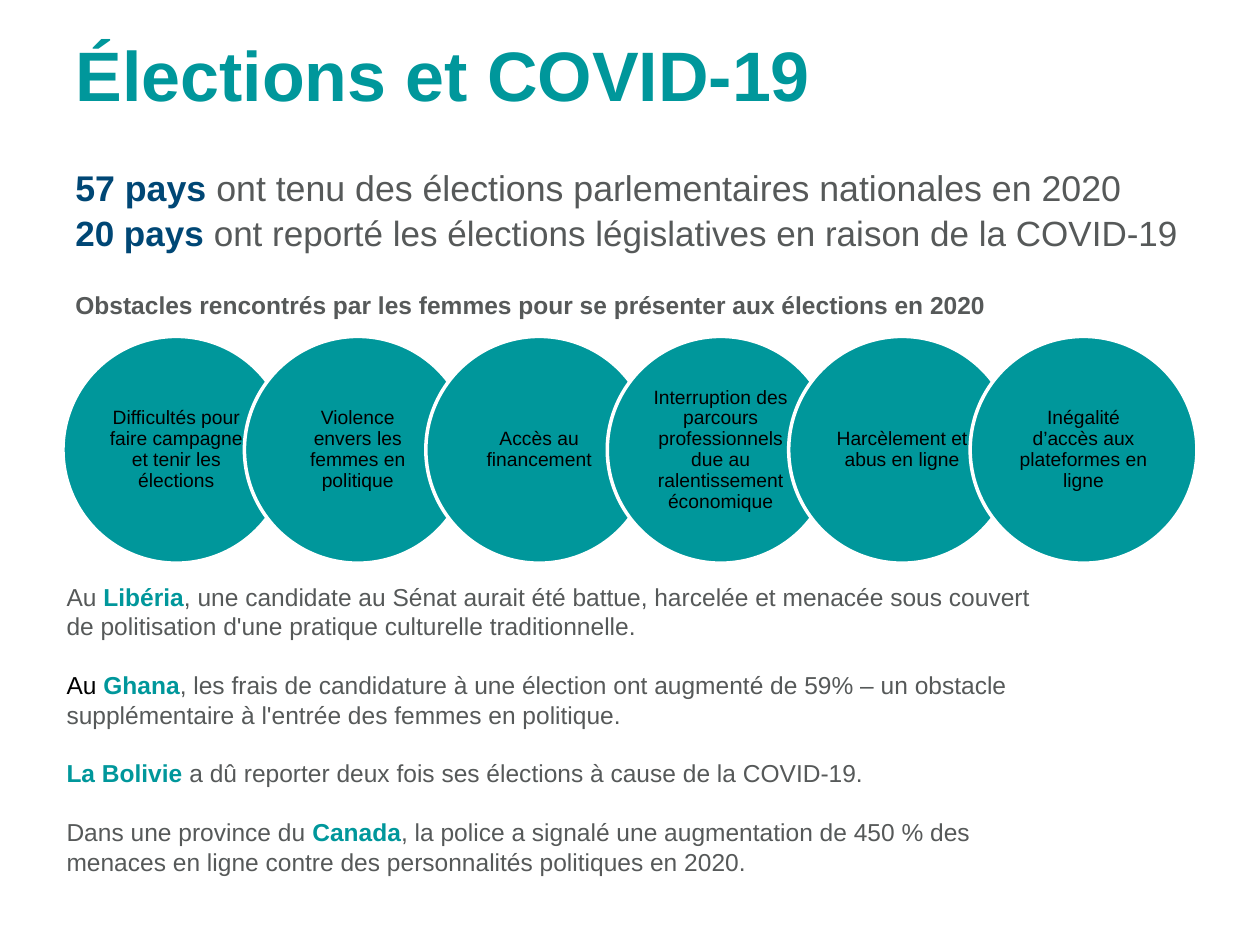
from pptx import Presentation
from pptx.dml.color import RGBColor
from pptx.enum import shapes, text
from pptx.util import Inches, Pt

TEAL = RGBColor(0x00, 0x97, 0x9B)
NAVY = RGBColor(0x00, 0x47, 0x75)
GRAY = RGBColor(0x56, 0x59, 0x59)
BLACK = RGBColor(0, 0, 0)
WHITE = RGBColor(255, 255, 255)

# A run is (wording, colour, bold)
TITLE = [("Élections et COVID-19", TEAL, True)]
COUNTS_HELD = [
    ("57 pays ", NAVY, True),
    ("ont tenu des élections parlementaires nationales en 2020", GRAY, False),
]
COUNTS_POSTPONED = [
    ("20 pays ", NAVY, True),
    ("ont reporté les élections législatives en raison de la COVID-19", GRAY, False),
]
HEADING = [("Obstacles rencontrés par les femmes pour se présenter aux élections en 2020",
            GRAY, True)]
OBSTACLES = [
    "Difficultés pour faire campagne et tenir les élections",
    "Violence envers les femmes en politique",
    "Accès au financement",
    "Interruption des parcours professionnels due au ralentissement économique",
    "Harcèlement et abus en ligne",
    "Inégalité d’accès aux plateformes en ligne",
]
EXAMPLES = [
    [("Au ", GRAY, False), ("Libéria", TEAL, True),
     (", une candidate au Sénat aurait été battue, harcelée et menacée sous couvert "
      "de politisation d'une pratique culturelle traditionnelle.", GRAY, False)],
    [("Au ", BLACK, False), ("Ghana", TEAL, True),
     (", les frais de candidature à une élection ont augmenté de 59% – un obstacle "
      "supplémentaire à l'entrée des femmes en politique.", GRAY, False)],
    [("La Bolivie ", TEAL, True),
     ("a dû reporter deux fois ses élections à cause de la COVID-19.", GRAY, False)],
    [("Dans une province du ", GRAY, False), ("Canada", TEAL, True),
     (", la police a signalé une augmentation de 450 % des menaces en ligne contre "
      "des personnalités politiques en 2020.", GRAY, False)],
]

# Wording, size in points, (left, top, width, height)
TEXT_BOXES = [
    ([COUNTS_HELD], 20.4, (0.5, 1.27, 9, 0.4)),
    ([COUNTS_POSTPONED], 20, (0.5, 1.63, 9.3, 0.44)),
    (EXAMPLES, 14, (0.43, 4.57, 7.86, 2.46)),
    ([HEADING], 14, (0.5, 2.25, 8.24, 0.34)),
]
EXAMPLE_GAP = Pt(16.8)
CIRCLE_LEFT, CIRCLE_TOP, CIRCLE_SIZE = 0.5, 2.67, 1.8
CIRCLE_STEP = CIRCLE_SIZE * 0.8


def write(frame, paragraphs, size, align=text.PP_ALIGN.LEFT):
    frame.word_wrap = True
    for index, runs in enumerate(paragraphs):
        para = frame.add_paragraph() if index else frame.paragraphs[0]
        para.alignment = align
        para.space_before = EXAMPLE_GAP if index else Pt(0)
        for wording, color, bold in runs:
            span = para.add_run()
            span.text = wording
            span.font.name = "Arial"
            span.font.size = Pt(size)
            span.font.bold = bold
            span.font.color.rgb = color


def add_circle(page, index, label):
    left = CIRCLE_LEFT + index * CIRCLE_STEP
    circle = page.shapes.add_shape(
        shapes.MSO_SHAPE.OVAL, Inches(left), Inches(CIRCLE_TOP),
        Inches(CIRCLE_SIZE), Inches(CIRCLE_SIZE))
    circle.shadow.inherit = False
    circle.fill.solid()
    circle.fill.fore_color.rgb = TEAL
    circle.line.color.rgb = WHITE
    circle.line.width = Pt(2)
    frame = circle.text_frame
    frame.margin_top = frame.margin_bottom = Inches(0.02)
    frame.vertical_anchor = text.MSO_ANCHOR.MIDDLE
    write(frame, [[(label, BLACK, False)]], 11, text.PP_ALIGN.CENTER)
    frame.paragraphs[0].line_spacing = 0.9


def main():
    deck = Presentation()
    deck.slide_width, deck.slide_height = Inches(10), Inches(7.5)
    page = deck.slides.add_slide(deck.slide_layouts[5])

    title = page.shapes.title
    title.left, title.top, title.width, title.height = map(Inches, (0.5, 0.2, 9, 1.24))
    title.text_frame.vertical_anchor = text.MSO_ANCHOR.TOP
    title.text_frame.auto_size = text.MSO_AUTO_SIZE.NONE
    write(title.text_frame, [TITLE], 40)

    for paragraphs, size, place in TEXT_BOXES:
        box = page.shapes.add_textbox(*map(Inches, place))
        write(box.text_frame, paragraphs, size)

    for index, label in enumerate(OBSTACLES):
        add_circle(page, index, label)

    deck.save("out.pptx")


if __name__ == "__main__":
    main()
